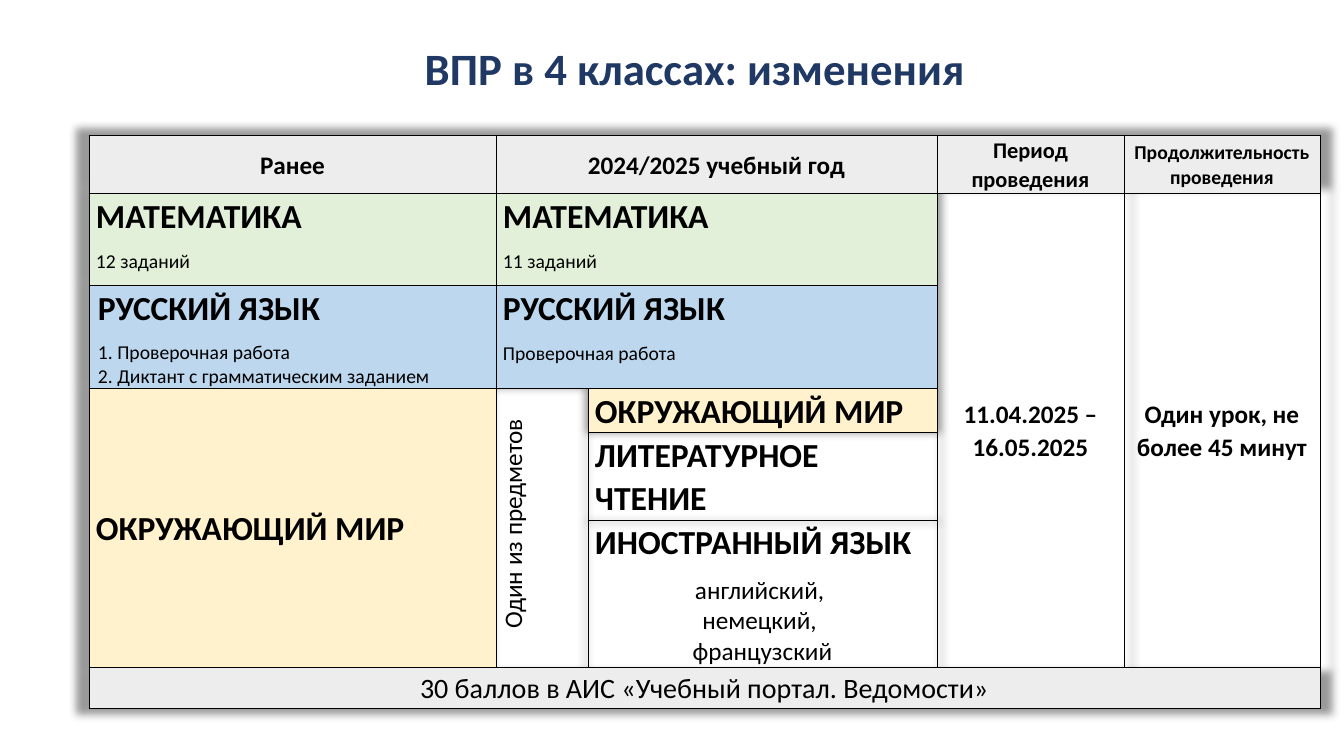
import lxml.etree
import pptx
import pptx.dml.color
import pptx.enum.text
import pptx.oxml
import pptx.oxml.ns
import pptx.util

PX = 914400 / 100.8
ALIGN = pptx.enum.text.PP_ALIGN
ANCHOR = pptx.enum.text.MSO_ANCHOR
GREY, GREEN, BLUE, YELLOW = "EDEDED", "E2F0D9", "BDD7EE", "FFF2CC"
NO_STYLE = "{2D5ABB26-0587-4C30-8999-92F81FD0307C}"
DRAWING = 'xmlns:a="http://schemas.openxmlformats.org/drawingml/2006/main"'


def px(length):
    return pptx.util.Emu(round(length * PX))


def color(value):
    return pptx.dml.color.RGBColor.from_string(value)


def write(para, text, size=18, bold=False, fill="000000", align=ALIGN.LEFT,
          spacing=None, after=0, left=0, first=0):
    """Fill one paragraph; a newline in the text becomes a line break."""
    para.text = text
    para.alignment = align
    para.space_after = pptx.util.Pt(after)
    if spacing:
        para.line_spacing = spacing
    if left or first:
        properties = para._p.get_or_add_pPr()
        properties.set("marL", str(px(left)))
        properties.set("indent", str(px(first)))
    for span in para.runs:
        span.font.name = "Calibri"
        span.font.size = pptx.util.Pt(size)
        span.font.bold = bold
        span.font.color.rgb = color(fill)


def line(text, size, bold=False, **options):
    """Describe a table paragraph in the usual spacing."""
    return {"text": text, "size": size, "bold": bold, "spacing": 1.07, "after": 8, **options}


def centered(text, size, bold=True, **options):
    return line(text, size, bold, align=ALIGN.CENTER, **options)


def subject(text, **options):
    return line(text, 24, True, **options)


class SlideBuilder:
    def __init__(self, deck):
        self.page = deck.slides.add_slide(deck.slide_layouts[5])
        self.border = "000000"
        self.border_width = pptx.util.Pt(0.5)
        self.title_color = "203864"

    def title(self, text, left, top, width, height):
        box = self.page.shapes.title
        box.left, box.top, box.width, box.height = map(px, (left, top, width, height))
        box.text_frame.vertical_anchor = ANCHOR.MIDDLE
        write(box.text_frame.paragraphs[0], text, size=32, bold=True,
              fill=self.title_color, align=ALIGN.CENTER)

    def table(self, left, top, columns, rows):
        frame = self.page.shapes.add_table(
            len(rows), len(columns), px(left), px(top), px(sum(columns)), px(sum(rows)))
        table = frame.table
        table.first_row = table.horz_banding = False
        for column, width in zip(table.columns, columns):
            column.width = px(width)
        for row, height in zip(table.rows, rows):
            row.height = px(height)
        properties = table._tbl.tblPr
        properties.find(pptx.oxml.ns.qn("a:tableStyleId")).text = NO_STYLE
        properties.insert(0, pptx.oxml.parse_xml(
            f'<a:effectLst {DRAWING}><a:outerShdw blurRad="63500" sx="102000" sy="102000" '
            'algn="ctr" rotWithShape="0"><a:srgbClr val="000000"><a:alpha val="40000"/>'
            '</a:srgbClr></a:outerShdw></a:effectLst>'))
        for cell in table.iter_cells():
            cell.fill.background()
            self.outline(cell)
        return table

    def outline(self, cell):
        properties = cell._tc.get_or_add_tcPr()
        for index, side in enumerate(("lnL", "lnR", "lnT", "lnB")):
            properties.insert(index, pptx.oxml.parse_xml(
                f'<a:{side} {DRAWING} w="{self.border_width}"><a:solidFill>'
                f'<a:srgbClr val="{self.border}"/></a:solidFill></a:{side}>'))

    def cell(self, table, row, column, lines, fill=None, span=(1, 1),
             anchor=ANCHOR.MIDDLE, upward=False):
        cell = table.cell(row, column)
        if span != (1, 1):
            cell.merge(table.cell(row + span[0] - 1, column + span[1] - 1))
        cell.margin_left = cell.margin_right = px(7)
        cell.margin_top = cell.margin_bottom = 0
        cell.vertical_anchor = anchor
        if upward:
            cell._tc.get_or_add_tcPr().set("vert", "vert270")
        if fill:
            cell.fill.solid()
            cell.fill.fore_color.rgb = color(fill)
        frame = cell.text_frame
        for index, options in enumerate(lines):
            para = frame.add_paragraph() if index else frame.paragraphs[0]
            write(para, **options)


def main():
    deck = pptx.Presentation()
    deck.slide_width, deck.slide_height = px(1344), px(756)
    slide = SlideBuilder(deck)
    slide.title("ВПР в 4 классах: изменения", 173, 35, 1044, 65)
    table = slide.table(89, 135, columns=(407, 92, 349, 187, 196),
                        rows=(57, 92, 101, 43, 87, 145, 41))

    headings = ((0, "Ранее", 18, 1), (1, "2024/2025 учебный год", 18, 2),
                (3, "Период проведения", 16, 1),
                (4, "Продолжительность проведения", 14, 1))
    for column, text, size, width in headings:
        slide.cell(table, 0, column, [centered(text, size)], GREY, (1, width))

    top = ANCHOR.TOP
    slide.cell(table, 1, 0, [subject("МАТЕМАТИКА"), line("12 заданий", 14)], GREEN, anchor=top)
    slide.cell(table, 1, 1, [subject("МАТЕМАТИКА"), line("11 заданий", 14)], GREEN, (1, 2), top)
    tasks = [{"text": text, "size": 14, "first": 2} for text in
             ("1. Проверочная работа", "2. Диктант с грамматическим заданием")]
    slide.cell(table, 2, 0, [subject("РУССКИЙ ЯЗЫК", first=2), *tasks], BLUE, anchor=top)
    slide.cell(table, 2, 1, [subject("РУССКИЙ ЯЗЫК"), line("Проверочная работа", 14)],
               BLUE, (1, 2), top)

    slide.cell(table, 1, 3, [centered("11.04.2025 – 16.05.2025", 18)], span=(5, 1))
    slide.cell(table, 1, 4, [centered("Один урок, не более 45 минут", 18)], span=(5, 1))

    slide.cell(table, 3, 0, [subject("ОКРУЖАЮЩИЙ МИР")], YELLOW, (3, 1))
    slide.cell(table, 3, 1, [centered("Один из предметов", 18, False, left=8)],
               span=(3, 1), upward=True)
    slide.cell(table, 3, 2, [subject("ОКРУЖАЮЩИЙ МИР")], YELLOW)
    slide.cell(table, 4, 2, [subject("ЛИТЕРАТУРНОЕ ЧТЕНИЕ")])
    languages = [{"text": text, "align": ALIGN.CENTER} for text in
                 ("английский, ", "немецкий, \nфранцузский")]
    slide.cell(table, 5, 2, [subject("ИНОСТРАННЫЙ ЯЗЫК"), *languages])

    footer = centered("30 баллов в АИС «Учебный портал. Ведомости»", 20, False, after=0)
    slide.cell(table, 6, 0, [footer], GREY, (1, 5))
    deck.save("out.pptx")


if __name__ == "__main__":
    main()
